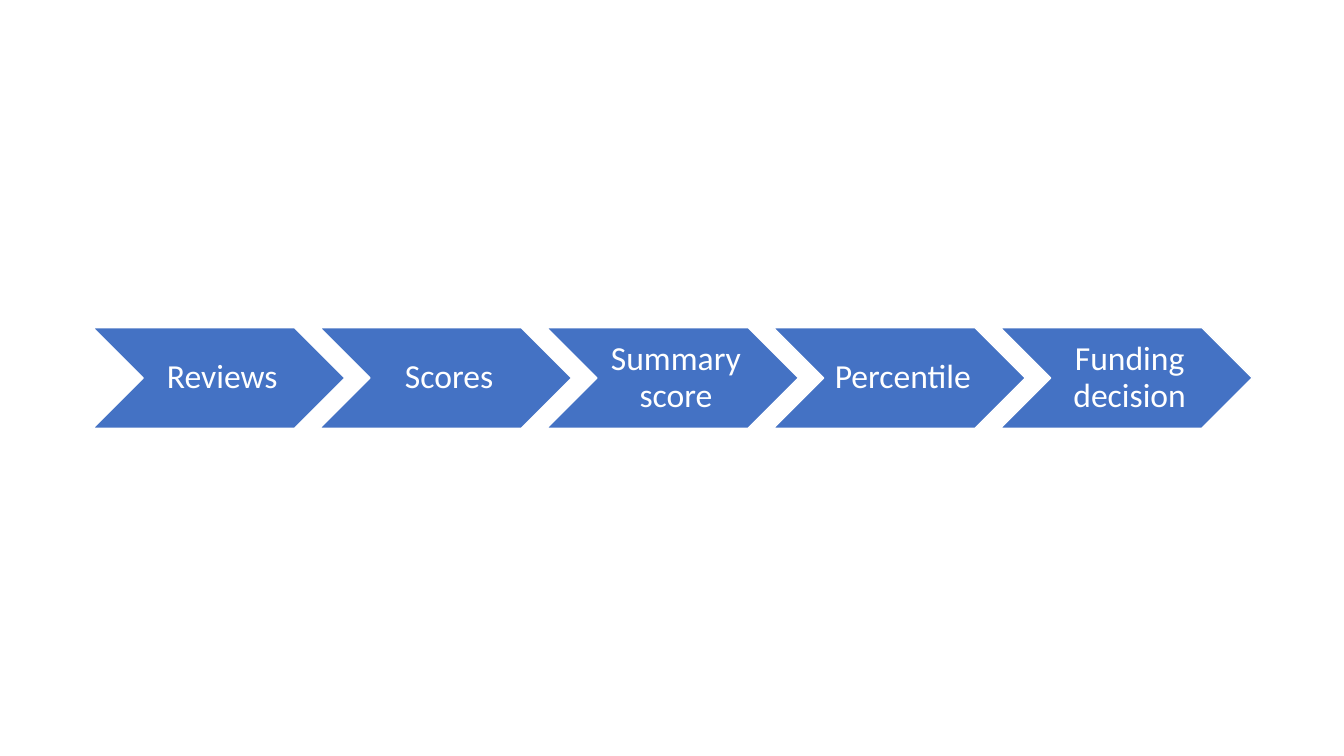
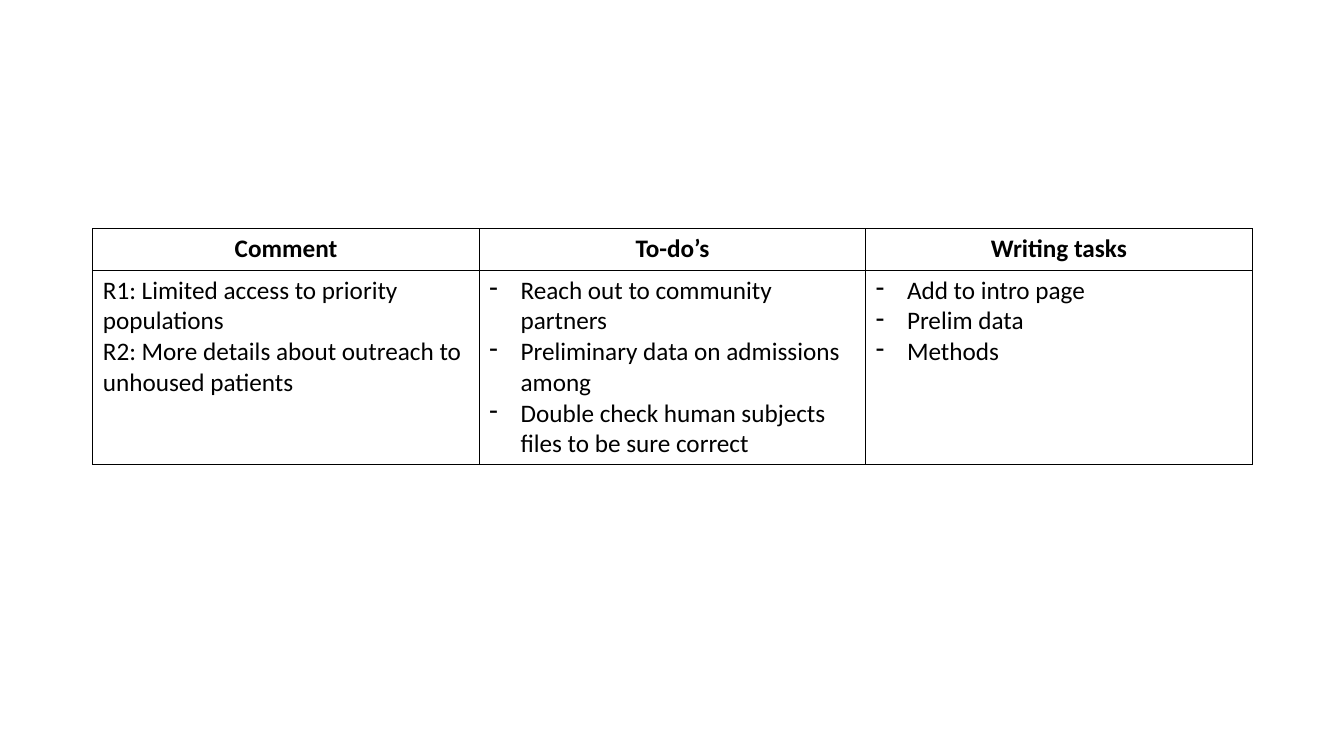
"""Build two slides: the review process and a table of responses."""
import pptx
import pptx.util
import pptx.dml.color
import pptx.enum.shapes
import pptx.enum.text
import pptx.oxml.ns
from dataclasses import dataclass
from lxml import etree

Inches, Pt = pptx.util.Inches, pptx.util.Pt
ALIGN = pptx.enum.text.PP_ALIGN
ANCHOR = pptx.enum.text.MSO_ANCHOR

STEPS = ["Reviews", "Scores", "Summary score", "Percentile", "Funding decision"]
COLUMNS = [
    {"head": "Comment", "dash": False, "items": [
        "R1: Limited access to priority populations",
        "R2: More details about outreach to unhoused patients"]},
    {"head": "To-do’s", "dash": True, "items": [
        "Reach out to community partners",
        "Preliminary data on admissions among",
        "Double check human subjects files to be sure correct"]},
    {"head": "Writing tasks", "dash": True, "items": [
        "Add to intro page", "Prelim data", "Methods"]},
]


@dataclass(frozen=True)
class Theme:
    """Colours, font and type sizes."""
    blue: str = "4472C4"
    white: str = "FFFFFF"
    black: str = "000000"
    font: str = "Calibri"
    step: int = 24
    cell: int = 18
    line: int = 1


THEME = Theme()
LEFT, WIDTH = 0.92, 11.5


def rgb(code):
    """Return a colour from its hex code."""
    return pptx.dml.color.RGBColor.from_string(code)


def style(par, size, color, bold=False, align=ALIGN.LEFT):
    """Set the font and alignment of a paragraph."""
    par.alignment = align
    font = par.font
    font.name, font.size, font.bold = THEME.font, Pt(size), bold
    font.color.rgb = rgb(color)


def node(parent, tag, **attrs):
    """Add a DrawingML element to its parent."""
    return etree.SubElement(parent, pptx.oxml.ns.qn(tag), attrs)


def border(cell):
    """Draw the four sides of a cell and leave it unfilled."""
    props = cell._tc.get_or_add_tcPr()
    for side in ("L", "R", "T", "B"):
        line = node(props, f"a:ln{side}", w=str(Pt(THEME.line)))
        node(node(line, "a:solidFill"), "a:srgbClr", val=THEME.black)
    cell.fill.background()


def dash(par):
    """Give a paragraph a hanging dash."""
    props = par._p.get_or_add_pPr()
    indent = Inches(0.31)
    props.set("marL", str(indent))
    props.set("indent", str(-indent))
    node(props, "a:buChar", char="-")


def draw_steps(slide):
    """Draw the row of chevrons."""
    wide, high, top = 2.5, 1, 3.25
    pitch = (WIDTH - wide) / (len(STEPS) - 1)
    for i, text in enumerate(STEPS):
        shape = slide.shapes.add_shape(
            pptx.enum.shapes.MSO_SHAPE.CHEVRON, Inches(LEFT + i * pitch),
            Inches(top), Inches(wide), Inches(high))
        shape.shadow.inherit = False
        shape.fill.solid()
        shape.fill.fore_color.rgb = rgb(THEME.blue)
        shape.line.color.rgb = rgb(THEME.white)
        shape.line.width = Pt(THEME.line)
        frame = shape.text_frame
        frame.word_wrap = True
        frame.vertical_anchor = ANCHOR.MIDDLE
        frame.margin_left = Inches(0.1)
        frame.margin_right = Inches(0.03)
        frame.margin_top = frame.margin_bottom = Inches(0.03)
        par = frame.paragraphs[0]
        par.text, par.line_spacing = text, 0.9
        style(par, THEME.step, THEME.white, align=ALIGN.CENTER)


def draw_table(slide):
    """Draw the table of comments and tasks."""
    rows = (0.41, 1.92)
    table = slide.shapes.add_table(
        len(rows), len(COLUMNS), Inches(LEFT), Inches(2.27),
        Inches(WIDTH), Inches(sum(rows))).table
    table.first_row = table.horz_banding = False
    for row, high in zip(table.rows, rows):
        row.height = Inches(high)
    for i, column in enumerate(COLUMNS):
        table.columns[i].width = Inches(WIDTH / len(COLUMNS))
        head, body = table.cell(0, i), table.cell(1, i)
        for cell in (head, body):
            border(cell)
        head.text = column["head"]
        style(head.text_frame.paragraphs[0], THEME.cell, THEME.black,
              bold=True, align=ALIGN.CENTER)
        body.text = "\n".join(column["items"])
        for par in body.text_frame.paragraphs:
            if column["dash"]:
                dash(par)
            style(par, THEME.cell, THEME.black)


def main():
    """Build and save the slides."""
    deck = pptx.Presentation()
    deck.slide_width, deck.slide_height = Inches(13.33), Inches(7.5)
    blank = deck.slide_layouts[6]
    for draw in (draw_steps, draw_table):
        draw(deck.slides.add_slide(blank))
    deck.save("out.pptx")


if __name__ == "__main__":
    main()
